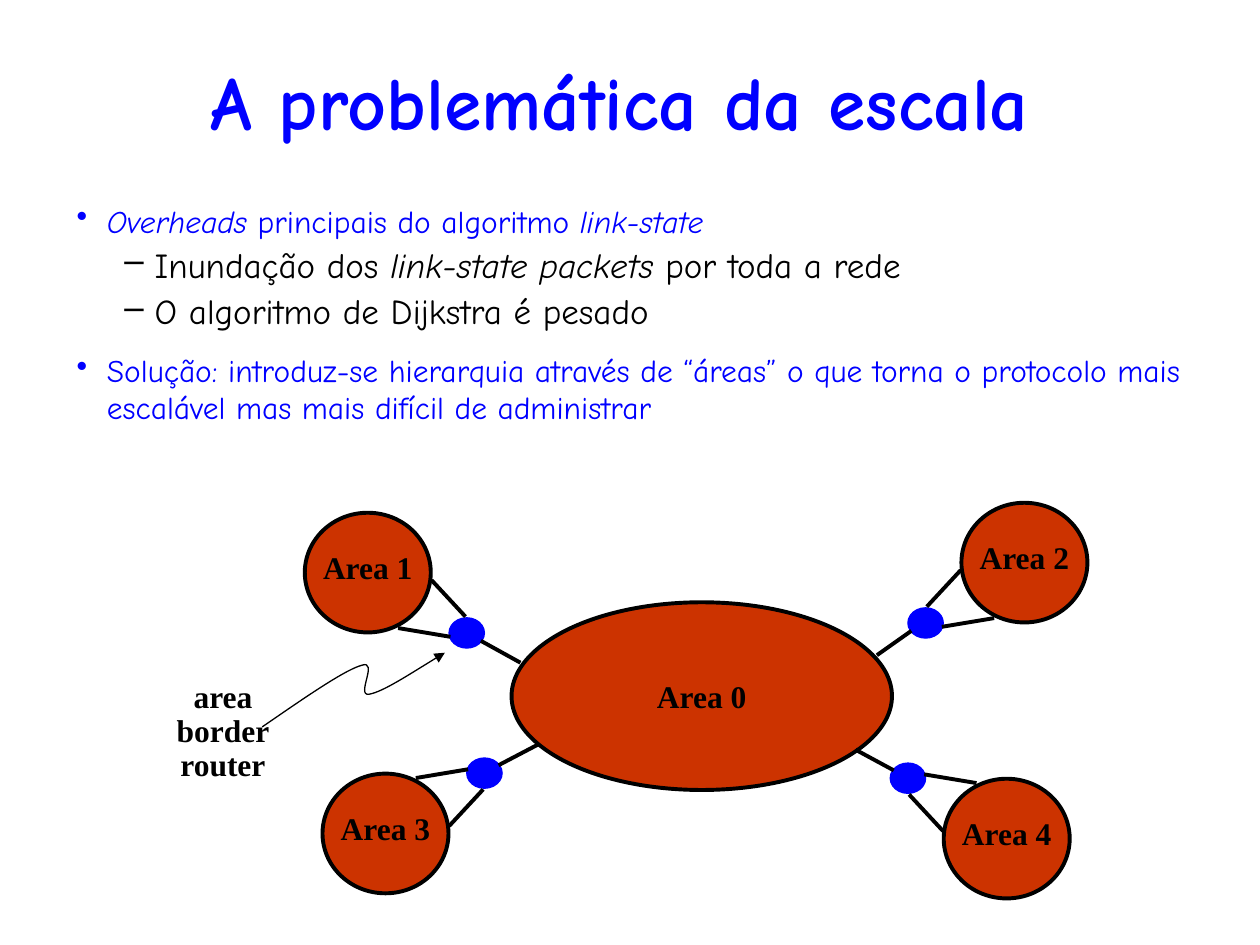
from pptx import Presentation
from pptx.dml.color import RGBColor
from pptx.enum.shapes import MSO_CONNECTOR, MSO_SHAPE
from pptx.enum.text import MSO_ANCHOR, PP_ALIGN
from pptx.oxml.ns import qn
from pptx.util import Pt
from lxml.etree import SubElement

BLUE = RGBColor(0x00, 0x00, 0xFF)
BLACK = RGBColor(0x00, 0x00, 0x00)
RED = RGBColor(0xCC, 0x33, 0x00)

TITLE = {"name": "Comic Neue", "size": Pt(43.2), "bold": True, "rgb": BLUE}
POINT = {"name": "Comic Neue", "size": Pt(18), "rgb": BLUE}
DETAIL = {"name": "Comic Neue", "size": Pt(20), "rgb": BLACK}
LABEL = {"name": "Times New Roman", "size": Pt(18), "bold": True, "rgb": BLACK}

MAIN = {"char": "•", "left": 17.28, "before": 10.8, "font": POINT}
SUB = {"char": "–", "left": 44.64, "before": 2.4, "font": DETAIL}
HANG = 17.28

BODY = [
    (MAIN, [("Overheads ", True), ("principais do algoritmo ", False),
            ("link-state", True)]),
    (SUB, [("Inundação dos ", False), ("link-state packets ", True),
           ("por toda a rede", False)]),
    (SUB, [("O algoritmo de Dijkstra é pesado", False)]),
    (MAIN, [("Solução: introduz-se hierarquia através de “áreas” o que torna "
             "o protocolo mais escalável mas mais difícil de administrar", False)]),
]

AREAS = [
    ("Area 1", (210.2, 327.2), (1, 1), (297.4, 378.7)),
    ("Area 2", (585.4, 321.5), (-1, 1), (501.1, 374.4)),
    ("Area 3", (220.3, 476.3), (1, -1), (307.4, 425.5)),
    ("Area 4", (575.3, 479.2), (-1, -1), (488.9, 428.4)),
]

CURVE = [(149.8, 415.4), (172.8, 399.6), (196.6, 383), (206.6, 380.2),
         (216.7, 376.6), (203, 398.2), (211, 396.7),
         (218.9, 395.3), (236.2, 383.8), (254.2, 373)]


def style(font, form):
    for key, value in form.items():
        if key == "rgb":
            font.color.rgb = value
        else:
            setattr(font, key, value)


def write(par, text, form):
    run = par.add_run()
    run.text = text
    style(run.font, form)
    return run


def add_box(slide, left, top, width, height, wrap=False):
    box = slide.shapes.add_textbox(Pt(left), Pt(top), Pt(width), Pt(height))
    box.text_frame.word_wrap = wrap
    return box.text_frame


def add_label(frame, lines, form, space=1.0):
    for index, text in enumerate(lines):
        par = frame.add_paragraph() if index else frame.paragraphs[0]
        par.alignment = PP_ALIGN.CENTER
        par.line_spacing = space
        write(par, text, form)


def add_body(slide):
    frame = add_box(slide, 36.7, 111.6, 648, 356.4, True)
    for index, (kind, parts) in enumerate(BODY):
        par = frame.add_paragraph() if index else frame.paragraphs[0]
        par.space_before = Pt(kind["before"])
        props = par._p.get_or_add_pPr()
        props.set("marL", str(Pt(kind["left"])))
        props.set("indent", str(-Pt(HANG)))
        SubElement(props, qn("a:buChar")).set("char", kind["char"])
        for text, slant in parts:
            write(par, text, {**kind["font"], "italic": slant})


def add_oval(slide, mid, width, height, fill, edge, weight):
    shape = slide.shapes.add_shape(
        MSO_SHAPE.OVAL, Pt(mid[0] - width / 2), Pt(mid[1] - height / 2),
        Pt(width), Pt(height))
    shape.shadow.inherit = False
    shape.fill.solid()
    shape.fill.fore_color.rgb = fill
    shape.line.color.rgb = edge
    shape.line.width = Pt(weight)
    return shape


def add_line(slide, start, end):
    line = slide.shapes.add_connector(
        MSO_CONNECTOR.STRAIGHT, *(Pt(value) for value in (*start, *end)))
    line.line.color.rgb = BLACK
    line.line.width = Pt(2.25)
    SubElement(line.element.spPr, qn("a:effectLst"))


def add_curve(slide):
    spots = [(Pt(x), Pt(y)) for x, y in CURVE]
    maker = slide.shapes.build_freeform(*spots[0], scale=1.0)
    maker.add_line_segments(spots[1:], close=False)
    shape = maker.convert_to_shape()
    shape.shadow.inherit = False
    shape.fill.background()
    shape.line.color.rgb = BLACK
    shape.line.width = Pt(0.75)
    track = next(shape.element.iter(qn("a:path")))
    steps = track.findall(qn("a:lnTo"))
    for first in range(0, len(steps), 3):
        bend = SubElement(track, qn("a:cubicBezTo"))
        for step in steps[first:first + 3]:
            bend.append(step[0])
            track.remove(step)
    tail = SubElement(shape.line._get_or_add_ln(), qn("a:tailEnd"))
    tail.set("type", "triangle")


def add_area(slide, name, mid, turn, end):
    def place(x, y):
        return mid[0] + turn[0] * x, mid[1] + turn[1] * y

    add_oval(slide, mid, 72, 68.4, RED, BLACK, 2.25)
    add_oval(slide, place(56.5, 34.5), 20.2, 17.3, BLUE, BLUE, 0.75)
    add_line(slide, place(64.6, 39), end)
    add_line(slide, place(36.4, 4.3), place(55.8, 25.2))
    add_line(slide, place(17.3, 31.7), place(47.2, 36.7))
    add_label(add_box(slide, mid[0] - 33, mid[1] - 17.7, 66, 28.8), [name], LABEL)


def main():
    deck = Presentation()
    deck.slide_width, deck.slide_height = Pt(720), Pt(540)
    slide = deck.slides.add_slide(deck.slide_layouts[6])
    title = add_box(slide, 23.8, 30.2, 660.2, 54, True)
    title.vertical_anchor = MSO_ANCHOR.MIDDLE
    add_label(title, ["A problemática da escala"], TITLE)
    add_body(slide)
    core = add_oval(slide, (401, 397.8), 217.4, 107.3, RED, BLACK, 2.25).text_frame
    core.word_wrap = False
    core.vertical_anchor = MSO_ANCHOR.MIDDLE
    add_label(core, ["Area 0"], LABEL)
    for area in AREAS:
        add_area(slide, *area)
    add_curve(slide)
    note = add_box(slide, 93.6, 385.9, 67.7, 66.2)
    add_label(note, ["area", "border", "router"], LABEL, 0.9)
    deck.save("out.pptx")


if __name__ == "__main__":
    main()
